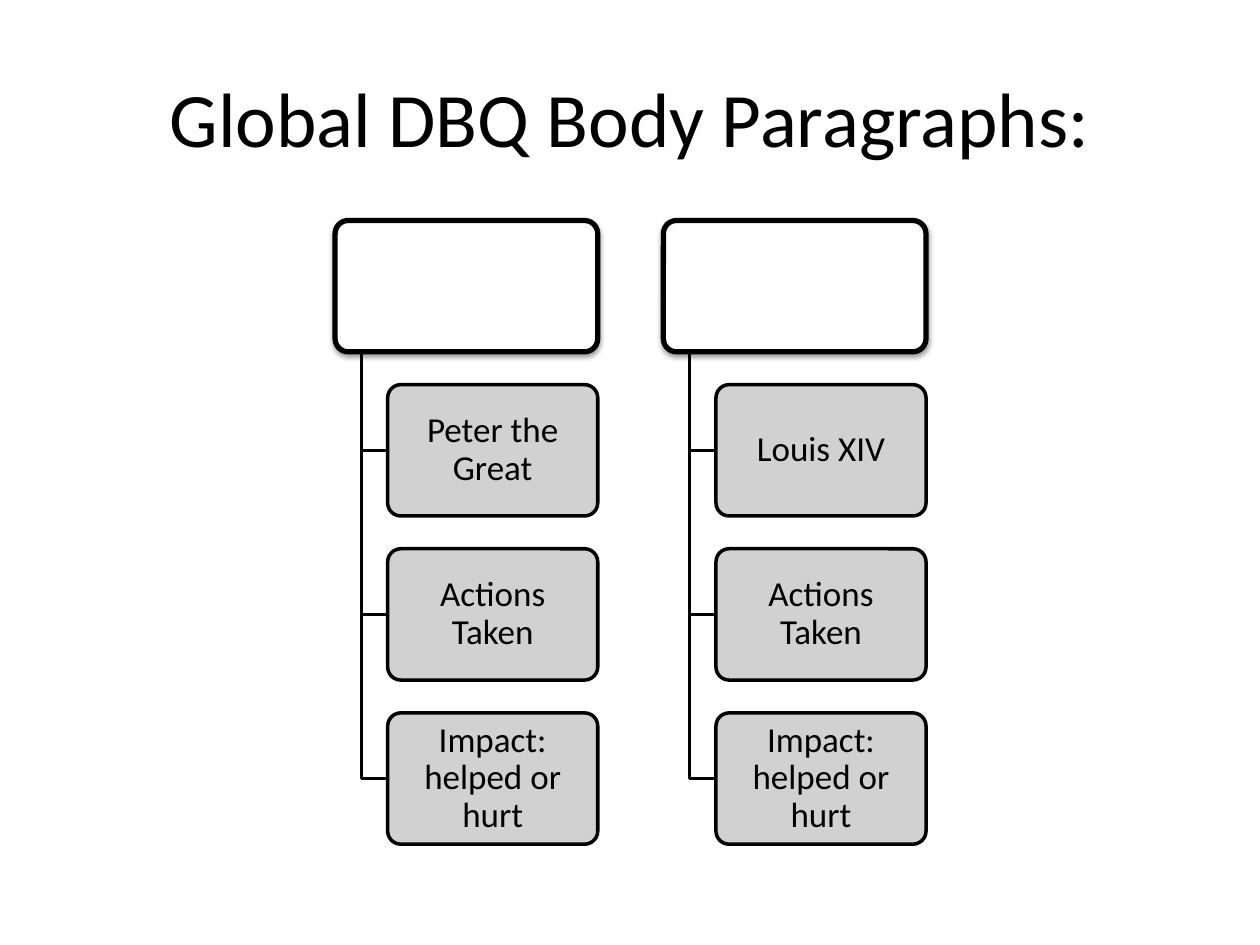
from lxml.etree import SubElement
from pptx import Presentation
from pptx.dml.color import RGBColor
from pptx.enum.shapes import MSO_SHAPE
from pptx.enum.text import MSO_ANCHOR, PP_ALIGN
from pptx.oxml.ns import qn
from pptx.util import Inches, Pt

WIDE, HIGH = 10, 7.5
TOP, END = 1.75, 6.7
LEFT = 2.66
ROWS = 4
GAP = 0.25  # row gap as a share of the box height
UNIT = (END - TOP) / (ROWS + GAP * (ROWS - 1))  # box height
STEP = UNIT * (1 + GAP)
HEAD = 2 * UNIT
STEM = 0.2 * UNIT
INDENT = 2 * STEM

TREES = [
    ["Peter the Great", "Actions Taken", "Impact: helped or hurt"],
    ["Louis XIV", "Actions Taken", "Impact: helped or hurt"],
]


def color(code):
    return RGBColor.from_string(code)


def write(shape, text, size=20, space=0.9, after=0, pad=(0.07, 0.06)):
    frame = shape.text_frame
    frame.word_wrap = True
    frame.vertical_anchor = MSO_ANCHOR.MIDDLE
    frame.margin_left = frame.margin_right = Inches(pad[0])
    frame.margin_top = frame.margin_bottom = Inches(pad[1])
    para = frame.paragraphs[0]
    para.alignment = PP_ALIGN.CENTER
    para.line_spacing = space
    para.space_after = Pt(after)
    run = para.add_run()
    run.text = text
    run.font.name = "Calibri"
    run.font.size = Pt(size)
    run.font.color.rgb = color("000000")


def outline(shape, width):
    shape.shadow.inherit = False
    shape.line.color.rgb = color("000000")
    shape.line.width = Pt(width)


def box(slide, x, y, wide, fill, line):
    shape = slide.shapes.add_shape(
        MSO_SHAPE.ROUNDED_RECTANGLE,
        Inches(x), Inches(y), Inches(wide), Inches(UNIT))
    shape.adjustments[0] = 0.1
    shape.fill.solid()
    shape.fill.fore_color.rgb = color(fill)
    outline(shape, line)
    return shape


def fade(shape, share):
    """Set the opacity of a solid fill."""
    tone = shape._element.spPr.find(qn("a:solidFill"))[0]
    SubElement(tone, qn("a:alpha"), val=str(int(share * 100000)))


def shade(shape):
    """Add a soft shadow below the shape."""
    effects = shape._element.spPr.find(qn("a:effectLst"))
    drop = SubElement(effects, qn("a:outerShdw"), blurRad=str(Pt(3.1)),
                      dist=str(Pt(1.6)), dir="5400000", rotWithShape="0")
    tone = SubElement(drop, qn("a:srgbClr"), val="000000")
    SubElement(tone, qn("a:alpha"), val="38000")


def elbow(slide, x, y, drop):
    """Draw a line down from a head and right to a child."""
    pen = slide.shapes.build_freeform(Inches(x), Inches(y))
    pen.add_line_segments(
        [(Inches(x), Inches(y + drop)), (Inches(x + STEM), Inches(y + drop))],
        close=False)
    shape = pen.convert_to_shape()
    shape.fill.background()
    outline(shape, 2)


def tree(slide, x, labels):
    shade(box(slide, x, TOP, HEAD, "FFFFFF", 3))
    for row, label in enumerate(labels, 1):
        y = TOP + row * STEP
        elbow(slide, x + STEM, TOP + UNIT, row * STEP - UNIT / 2)
        child = box(slide, x + INDENT, y, HEAD - INDENT, "CCCCCC", 2)
        fade(child, 0.9)
        write(child, label, after=7)


def main():
    deck = Presentation()
    deck.slide_width, deck.slide_height = Inches(WIDE), Inches(HIGH)
    slide = deck.slides.add_slide(deck.slide_layouts[5])
    title = slide.shapes.title
    title.left, title.top = Inches(0.05 * WIDE), Inches(0.04 * HIGH)
    title.width, title.height = Inches(0.9 * WIDE), Inches(1.25)
    write(title, "Global DBQ Body Paragraphs:", size=44, space=1,
          pad=(0.1, 0.05))
    for col, labels in enumerate(TREES):
        tree(slide, LEFT + col * 2 * STEP, labels)
    deck.save("out.pptx")


if __name__ == "__main__":
    main()
